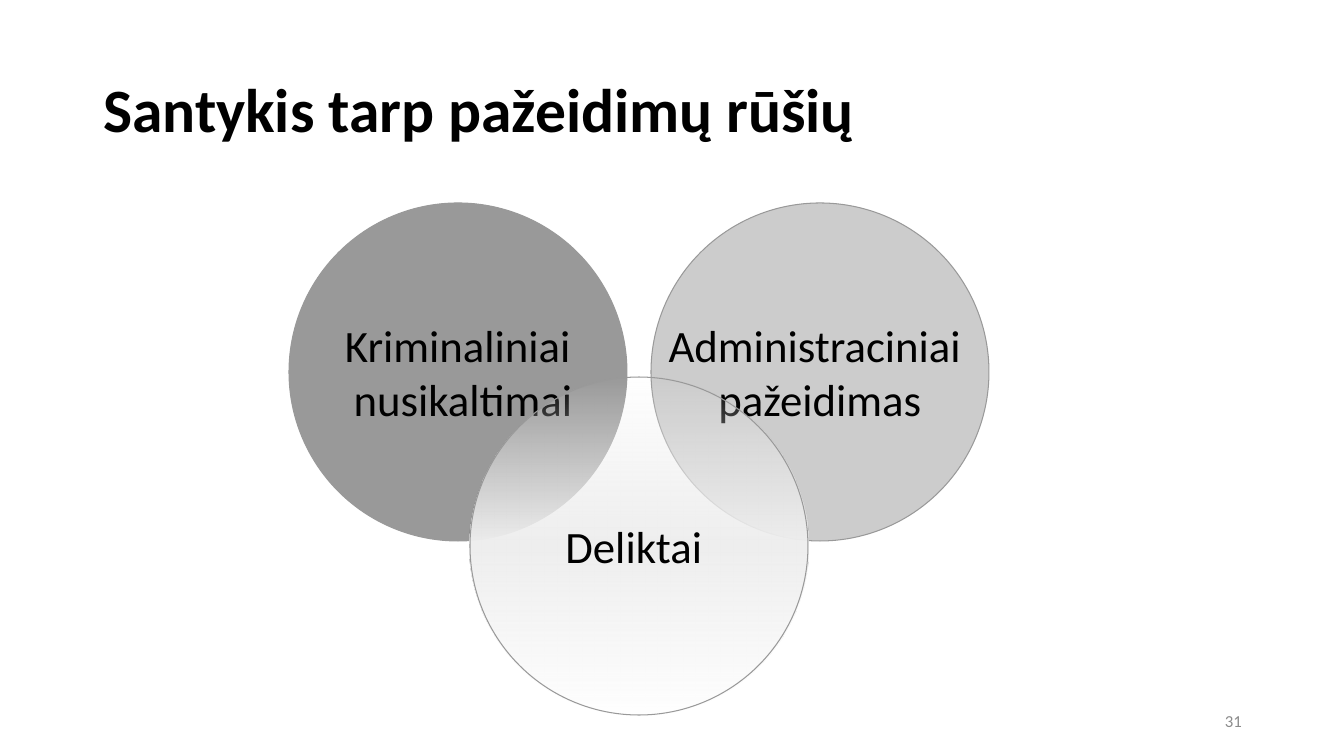
from lxml.etree import SubElement
from pptx import Presentation
from pptx.dml.color import RGBColor
from pptx.enum.shapes import MSO_SHAPE as Shape
from pptx.enum.text import MSO_ANCHOR as Anchor, MSO_AUTO_SIZE as AutoSize, PP_ALIGN as Align
from pptx.oxml.ns import qn
from pptx.util import Pt

EMU_PER_PX = 914400 / 100.8
SLIDE_SIZE = (1344, 756)
TITLE_BOX = (93, 40, 1159, 145)
NUMBER_BOX = (950, 701, 302, 39)
VENN_BOX = (289, 203, 700, 512)
DIAMETER = 338
TITLE_FORMAT = {"size": Pt(44), "bold": True}
NUMBER_FORMAT = {"size": Pt(12)}
LABEL_FORMAT = {"size": Pt(32)}


def px(length):
    """Turn pixels into EMU."""
    return round(length * EMU_PER_PX)


def color(hex_string):
    """Turn a hex string into a colour."""
    return RGBColor.from_string(hex_string)


def write(frame, lines, font_format, align, hex_color="000000", wrap=True):
    """Fill a text frame with one formatted paragraph per line."""
    frame.text = "\n".join(lines)
    frame.auto_size = AutoSize.NONE
    frame.word_wrap = wrap
    frame.vertical_anchor = Anchor.MIDDLE
    for paragraph in frame.paragraphs:
        paragraph.alignment = align
        font = paragraph.runs[0].font
        font.name = "Calibri"
        font.color.rgb = color(hex_color)
        for name, value in font_format.items():
            setattr(font, name, value)


def add_title(slide, box, text):
    """Move the title placeholder to the box and fill it."""
    title = slide.shapes.title
    title.left, title.top, title.width, title.height = map(px, box)
    write(title.text_frame, [text], TITLE_FORMAT, Align.LEFT)
    title.text_frame.paragraphs[0].line_spacing = 0.9


def add_number(slide, box, text):
    """Write the slide number in the box."""
    shape = slide.shapes.add_textbox(*map(px, box))
    write(shape.text_frame, [text], NUMBER_FORMAT, Align.RIGHT, "8B8B8B")


def fade_fill(shape, hex_color):
    """Fill a shape with one colour that fades out at top and bottom."""
    shape.fill.gradient()
    shape.fill.gradient_angle = 270
    stops = shape._element.spPr.find(qn("a:gradFill")).find(qn("a:gsLst"))
    for stop in list(stops):
        stops.remove(stop)
    for position, alpha in ((0, 0), (50000, 100000), (100000, 0)):
        stop = SubElement(stops, qn("a:gs"), pos=str(position))
        tint = SubElement(stop, qn("a:srgbClr"), val=hex_color)
        SubElement(tint, qn("a:alpha"), val=str(alpha))


def add_circle(slide, left, top, lines, hex_color, fades):
    """Add one labelled circle of the diagram."""
    circle = slide.shapes.add_shape(Shape.OVAL, *map(px, (left, top, DIAMETER, DIAMETER)))
    circle.shadow.inherit = False
    if fades:
        fade_fill(circle, hex_color)
    else:
        circle.fill.solid()
        circle.fill.fore_color.rgb = color(hex_color)
    circle.line.color.rgb = color("999999")
    circle.line.width = Pt(0)
    write(circle.text_frame, lines, LABEL_FORMAT, Align.CENTER, wrap=False)


def add_venn(slide, box):
    """Place two circles at the top corners of the box and one at bottom centre."""
    left, top, width, height = box
    right = left + width - DIAMETER
    middle = (left + right) // 2
    bottom = top + height - DIAMETER
    add_circle(slide, left, top, ["Kriminaliniai", " nusikaltimai"], "999999", False)
    add_circle(slide, right, top, ["Administraciniai ", "pažeidimas"], "CCCCCC", False)
    add_circle(slide, middle, bottom, ["Deliktai "], "EEEEEE", True)


def main():
    """Build and save the slide."""
    presentation = Presentation()
    presentation.slide_width, presentation.slide_height = map(px, SLIDE_SIZE)
    slide = presentation.slides.add_slide(presentation.slide_layouts[5])
    add_title(slide, TITLE_BOX, "Santykis tarp pažeidimų rūšių")
    add_number(slide, NUMBER_BOX, "31")
    add_venn(slide, VENN_BOX)
    presentation.save("out.pptx")


if __name__ == "__main__":
    main()
